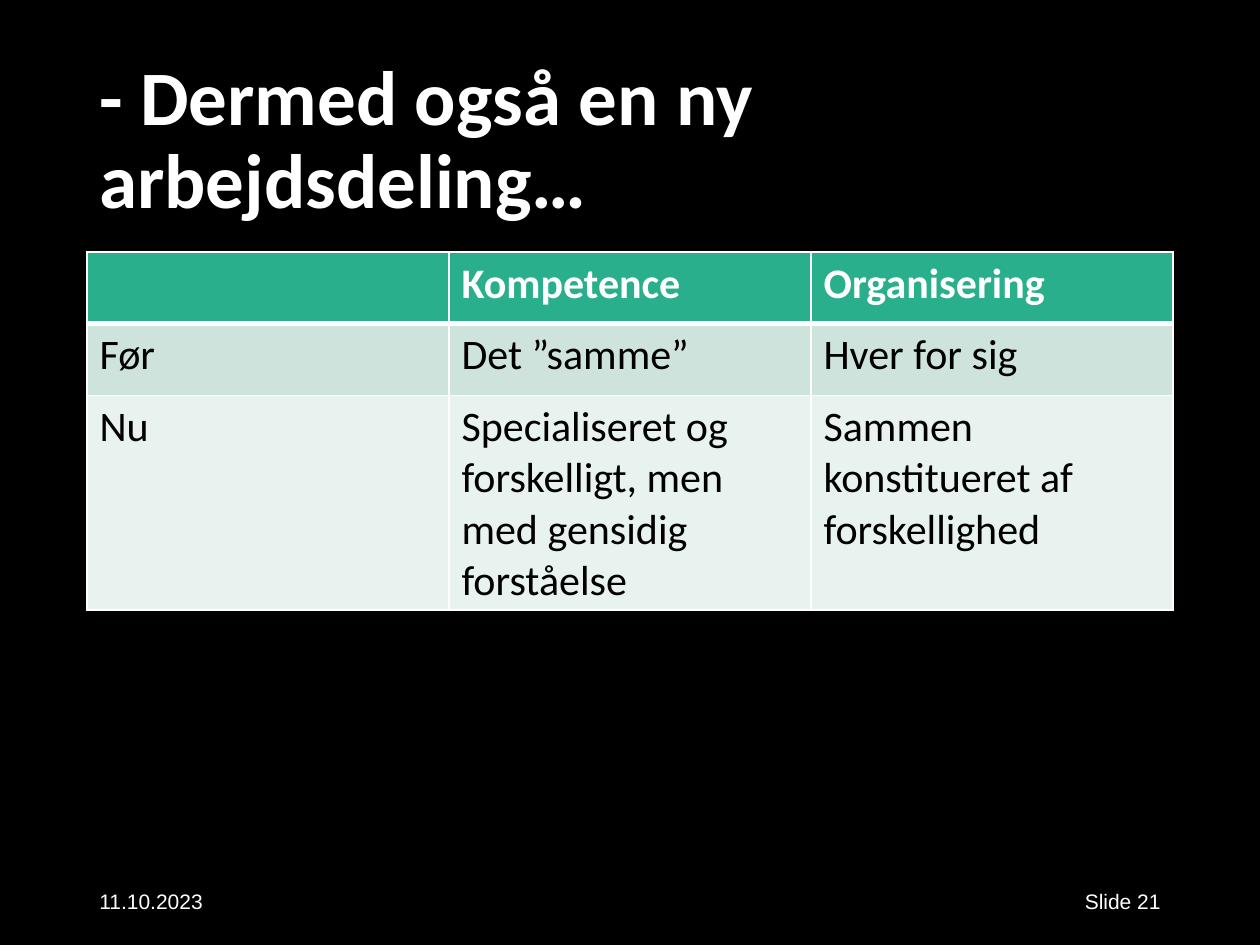
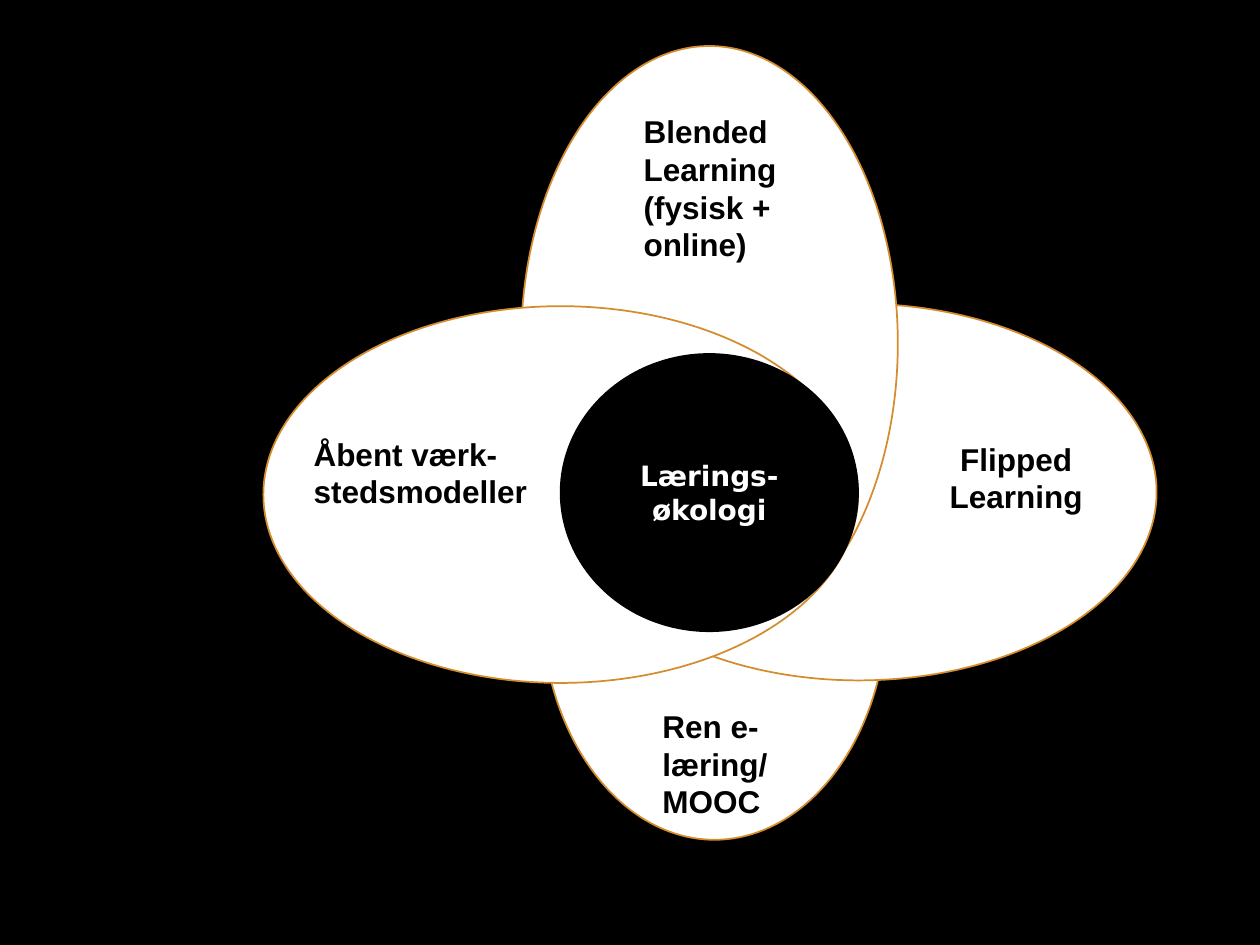
from dataclasses import dataclass

from lxml.etree import SubElement
from pptx import Presentation
from pptx.dml.color import RGBColor
from pptx.enum.shapes import MSO_SHAPE
from pptx.enum.text import MSO_ANCHOR, PP_ALIGN
from pptx.oxml.ns import qn
from pptx.util import Inches, Pt


@dataclass(frozen=True)
class Theme:
    black: str = "000000"
    white: str = "FFFFFF"
    outline: str = "D58C2E"
    row_fills: tuple = ("29AF8C", "CDE3DB", "E8F2EE")
    title_font: str = "Calibri"
    body_font: str = "Arial"
    core_font: str = "DejaVu Sans"
    title_size: int = 44
    table_size: int = 24
    petal_size: int = 18
    core_size: int = 16
    footer_size: int = 12
    thin: int = 1
    thick: int = 3


THEME = Theme()
LEFT, WIDTH = 0.69, 8.62

# Content: positions are (left, top, width, height) in inches
TITLE = "- Dermed også en ny arbejdsdeling…"
DIVISION_OF_WORK = [
    ("", "Kompetence", "Organisering"),
    ("Før", "Det ”samme”", "Hver for sig"),
    ("Nu", "Specialiseret og forskelligt, men med gensidig forståelse",
     "Sammen konstitueret af forskellighed"),
]
ROW_HEIGHTS = (0.57, 0.57, 1.7)
FOOTERS = [
    ("11.10.2023", LEFT, PP_ALIGN.LEFT),
    ("Slide 21", 7.06, PP_ALIGN.RIGHT),
]
PETALS = [  # place, rotation
    ((3.78, 3.4, 3.78, 2.75), 90),
    ((4.45, 2.41, 4.73, 2.99), 0),
    ((3.27, 1.23, 4.72, 2.99), 90),
    ((2.09, 2.43, 4.72, 2.99), 0),
]
CORE = ("Lærings-økologi", (4.45, 2.81, 2.36, 2.2))
PETAL_LABELS = [
    ("Åbent værk-\nstedsmodeller", (2.39, 3.4, 2.42, 1.01), PP_ALIGN.LEFT),
    ("Blended Learning (fysisk + online)", (5.01, 0.84, 1.8, 1.61), PP_ALIGN.LEFT),
    ("Flipped Learning", (7.04, 3.44, 2.05, 1.01), PP_ALIGN.CENTER),
    ("Ren e-læring/\nMOOC", (5.16, 5.56, 1.5, 1.01), PP_ALIGN.LEFT),
]


def color(code):
    return RGBColor.from_string(code)


def inches(place):
    return [Inches(value) for value in place]


def write(frame, text, font, size, ink, bold=False, align=PP_ALIGN.LEFT):
    frame.text = text
    frame.word_wrap = True
    for para in frame.paragraphs:
        para.alignment = align
        for span in para.runs:
            span.font.name = font
            span.font.size = Pt(size)
            span.font.bold = bold
            span.font.color.rgb = color(ink)


def add_text(page, place, text, *style, anchor=MSO_ANCHOR.TOP, **options):
    frame = page.shapes.add_textbox(*inches(place)).text_frame
    write(frame, text, *style, **options)
    frame.vertical_anchor = anchor
    return frame


def add_page(deck):
    page = deck.slides.add_slide(deck.slide_layouts[6])
    page.background.fill.solid()
    page.background.fill.fore_color.rgb = color(THEME.black)
    return page


def add_ellipse(page, place, fill, line, rotation=0):
    ellipse = page.shapes.add_shape(MSO_SHAPE.OVAL, *inches(place))
    ellipse.shadow.inherit = False
    ellipse.rotation = rotation
    ellipse.fill.solid()
    ellipse.fill.fore_color.rgb = color(fill)
    ellipse.line.color.rgb = color(line)
    ellipse.line.width = Pt(THEME.thin)
    return ellipse


def add_borders(cell, widths):
    properties = cell._tc.get_or_add_tcPr()
    for side, width in widths.items():
        border = SubElement(properties, qn(f"a:ln{side}"), w=str(Pt(width)))
        fill = SubElement(border, qn("a:solidFill"))
        SubElement(fill, qn("a:srgbClr"), val=THEME.white)


def add_work_table(page):
    place = (LEFT, 2, WIDTH, sum(ROW_HEIGHTS))
    columns = len(DIVISION_OF_WORK[0])
    table = page.shapes.add_table(
        len(DIVISION_OF_WORK), columns, *inches(place)).table
    for column in table.columns:
        column.width = Inches(WIDTH / columns)
    for number, texts in enumerate(DIVISION_OF_WORK):
        table.rows[number].height = Inches(ROW_HEIGHTS[number])
        header = number == 0
        # A thick rule parts the header from the rows below
        widths = {"L": THEME.thin, "R": THEME.thin,
                  "T": THEME.thick if number == 1 else THEME.thin,
                  "B": THEME.thick if header else THEME.thin}
        for cell, text in zip(table.rows[number].cells, texts):
            add_borders(cell, widths)
            cell.fill.solid()
            cell.fill.fore_color.rgb = color(THEME.row_fills[number])
            write(cell.text_frame, text, THEME.title_font, THEME.table_size,
                  THEME.white if header else THEME.black, bold=header)


def build_division_page(deck):
    page = add_page(deck)
    title = add_text(page, (LEFT, 0.4, WIDTH, 1.45), TITLE, THEME.title_font,
                     THEME.title_size, THEME.white, bold=True,
                     anchor=MSO_ANCHOR.MIDDLE)
    title.paragraphs[0].line_spacing = 0.9
    add_work_table(page)
    for text, left, align in FOOTERS:
        add_text(page, (left, 6.95, 2.25, 0.4), text, THEME.body_font,
                 THEME.footer_size, THEME.white, align=align,
                 anchor=MSO_ANCHOR.MIDDLE)


def build_ecology_page(deck):
    page = add_page(deck)
    # Overlapping petals, then the core on top
    for place, rotation in PETALS:
        add_ellipse(page, place, THEME.white, THEME.outline, rotation)
    text, place = CORE
    core = add_ellipse(page, place, THEME.black, THEME.black)
    write(core.text_frame, text, THEME.core_font, THEME.core_size,
          THEME.white, bold=True, align=PP_ALIGN.CENTER)
    core.text_frame.vertical_anchor = MSO_ANCHOR.MIDDLE
    for text, place, align in PETAL_LABELS:
        add_text(page, place, text, THEME.body_font, THEME.petal_size,
                 THEME.black, bold=True, align=align)


def main():
    deck = Presentation()
    deck.slide_width, deck.slide_height = Inches(10), Inches(7.5)
    build_division_page(deck)
    build_ecology_page(deck)
    deck.save("out.pptx")


if __name__ == "__main__":
    main()
